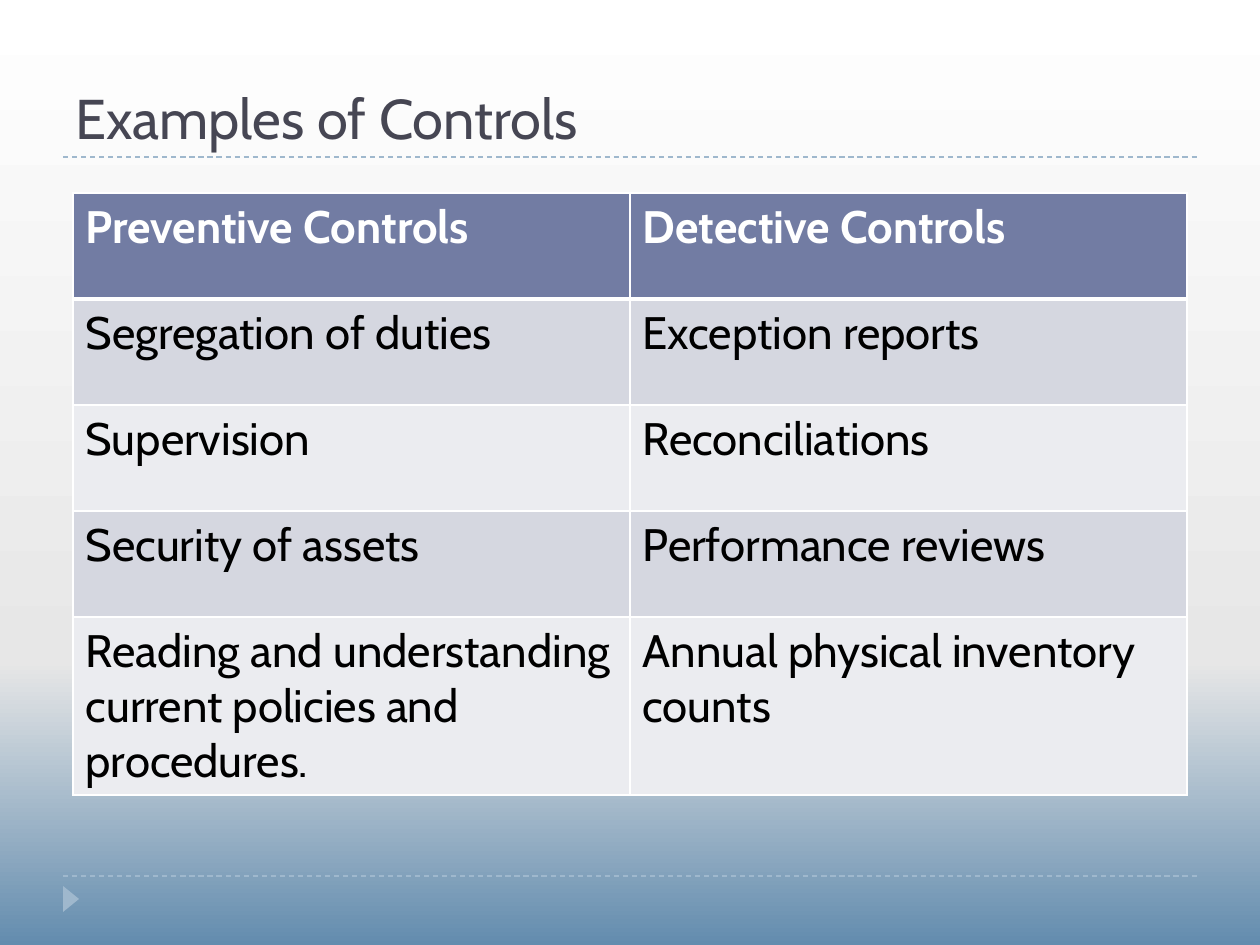
from copy import deepcopy

from lxml import etree
from pptx import Presentation
from pptx.dml.color import RGBColor
from pptx.enum.dml import MSO_LINE
from pptx.enum.shapes import MSO_CONNECTOR, MSO_SHAPE
from pptx.enum.text import MSO_ANCHOR
from pptx.oxml.ns import qn
from pptx.util import Pt

DASH = MSO_LINE.DASH
STRAIGHT = MSO_CONNECTOR.STRAIGHT
TRIANGLE = MSO_SHAPE.ISOSCELES_TRIANGLE
BOTTOM = MSO_ANCHOR.BOTTOM

EMU_PER_PX = 914400 / 126
WIDTH, HEIGHT = 1260, 945
MARGIN = 63
ACCENT = "9FB8CD"
BACKDROP = [(0, "638CAE"), (0.3, "E7E7E7"), (1, "FFFFFF")]
HEADER_FILL = "727CA3"
BAND_FILLS = ["EBECF0", "D5D7E0"]
CONTROLS = [
    ("Preventive Controls", "Detective Controls"),
    ("Segregation of duties", "Exception reports"),
    ("Supervision", "Reconciliations"),
    ("Security of assets", "Performance reviews"),
    ("Reading and understanding current policies and procedures.",
     "Annual physical inventory counts"),
]
ROW_HEIGHTS = [106, 106, 106, 106, 178]


def px(*lengths):
    return [round(length * EMU_PER_PX) for length in lengths]


def rgb(color):
    return RGBColor.from_string(color)


class SlideBuilder:
    """Holds the text style and the current slide, and adds elements to it."""

    def __init__(self, slide, font):
        self.slide = slide
        self.font = font

    def background(self, stops):
        fill = self.slide.background.fill
        fill.gradient()
        fill.gradient_angle = 90
        stop_list = self.slide.element.find(".//" + qn("a:gsLst"))
        while len(stop_list) < len(stops):
            stop_list.append(deepcopy(stop_list[0]))
        for stop, (position, color) in zip(fill.gradient_stops, stops):
            stop.position = position
            stop.color.rgb = rgb(color)

    def add_text(self, frame, text, size, color, bold=False):
        run = frame.paragraphs[0].add_run()
        run.text = text
        style = {"name": self.font, "size": Pt(size), "bold": bold}
        for attribute, value in style.items():
            setattr(run.font, attribute, value)
        run.font.color.rgb = rgb(color)

    def title(self, text, box, size, color):
        frame = self.slide.shapes.add_textbox(*px(*box)).text_frame
        layout = {"word_wrap": True, "vertical_anchor": BOTTOM}
        for attribute, value in layout.items():
            setattr(frame, attribute, value)
        self.add_text(frame, text, size, color)

    def rule(self, top):
        ends = px(MARGIN, top, WIDTH - MARGIN, top)
        rule = self.slide.shapes.add_connector(STRAIGHT, *ends)
        rule.line.color.rgb = rgb(ACCENT)
        rule.line.width = Pt(0.75)
        rule.line.dash_style = DASH
        etree.SubElement(rule._element.spPr, qn("a:effectLst"))

    def marker(self, box):
        marker = self.slide.shapes.add_shape(TRIANGLE, *px(*box))
        marker.rotation = 90
        marker.shadow.inherit = False
        marker.fill.solid()
        marker.fill.fore_color.rgb = rgb(ACCENT)
        marker.line.fill.background()

    def border(self, cell, widths):
        properties = cell._tc.get_or_add_tcPr()
        for side, width in widths.items():
            line = etree.SubElement(properties, qn(f"a:ln{side}"), w=str(Pt(width)))
            solid = etree.SubElement(line, qn("a:solidFill"))
            etree.SubElement(solid, qn("a:srgbClr"), val="FFFFFF")

    def table(self, rows, left, top, column_width, row_heights, size):
        columns = len(rows[0])
        box = px(left, top, column_width * columns, sum(row_heights))
        table = self.slide.shapes.add_table(len(rows), columns, *box).table
        for column in table.columns:
            column.width = px(column_width)[0]
        for index, (texts, height) in enumerate(zip(rows, row_heights)):
            table.rows[index].height = px(height)[0]
            header = index == 0
            fill = HEADER_FILL if header else BAND_FILLS[index % 2]
            color = "FFFFFF" if header else "000000"
            widths = {"L": 1, "R": 1, "T": 3 if index == 1 else 1, "B": 3 if header else 1}
            for cell, text in zip(table.rows[index].cells, texts):
                self.border(cell, widths)
                cell.fill.solid()
                cell.fill.fore_color.rgb = rgb(fill)
                self.add_text(cell.text_frame, text, size, color, header)


def main():
    deck = Presentation()
    deck.slide_width, deck.slide_height = px(WIDTH, HEIGHT)
    builder = SlideBuilder(deck.slides.add_slide(deck.slide_layouts[6]), "Cabin")
    builder.background(BACKDROP)
    for top in (876, 157):
        builder.rule(top)
    builder.marker((58, 891, 26, 16))
    builder.title("Examples of Controls", (MARGIN, 21, WIDTH - 2 * MARGIN, 136), 32, "464653")
    builder.table(CONTROLS, 73, 193, 557, ROW_HEIGHTS, 26)
    deck.save("out.pptx")


if __name__ == "__main__":
    main()
